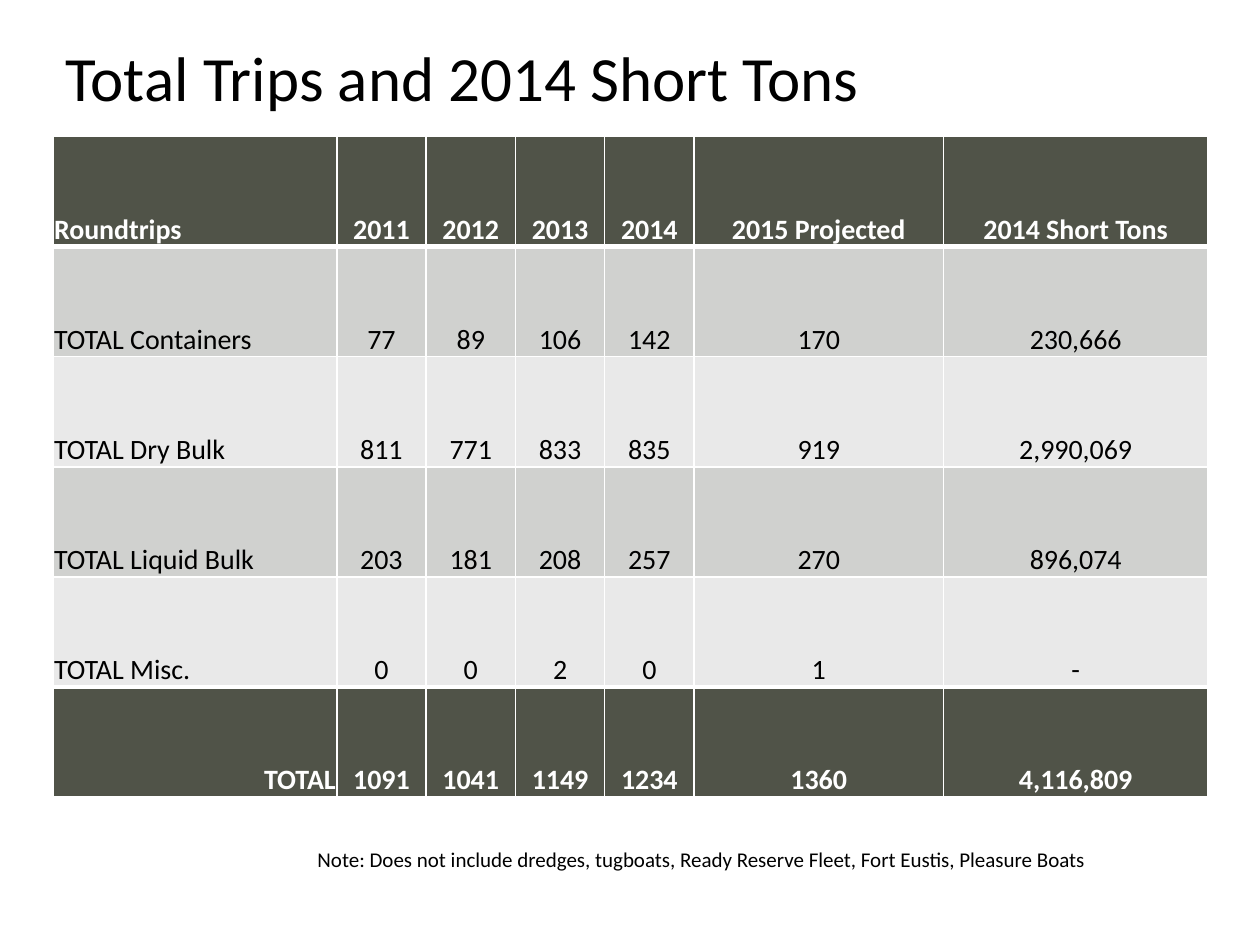
from lxml.etree import SubElement
from pptx import Presentation
from pptx.dml.color import RGBColor
from pptx.enum.text import MSO_ANCHOR, MSO_AUTO_SIZE, PP_ALIGN
from pptx.oxml.ns import qn
from pptx.util import Cm, Pt

FONT = "Calibri"
BLACK = RGBColor(0x00, 0x00, 0x00)
WHITE = RGBColor(0xFF, 0xFF, 0xFF)
DARK_GREEN = RGBColor(0x50, 0x53, 0x48)
BAND_DARK = RGBColor(0xD0, 0xD1, 0xCF)
BAND_LIGHT = RGBColor(0xE9, 0xE9, 0xE9)

LEFT = Cm(1.07)
WIDTH = Cm(23.28)
ROW_HEIGHT = Cm(2.22)
COLUMN_WIDTHS = [Cm(5.72)] + [Cm(1.8)] * 4 + [Cm(5.03), Cm(5.33)]
ROWS = [
    ["Roundtrips", "2011", "2012", "2013", "2014", "2015 Projected", "2014 Short Tons"],
    ["TOTAL Containers", "77", "89", "106", "142", "170", "230,666"],
    ["TOTAL Dry Bulk", "811", "771", "833", "835", "919", "2,990,069"],
    ["TOTAL Liquid Bulk", "203", "181", "208", "257", "270", "896,074"],
    ["TOTAL Misc.", "0", "0", "2", "0", "1", "-"],
    ["TOTAL", "1091", "1041", "1149", "1234", "1360", "4,116,809"],
]
LAST_ROW = len(ROWS) - 1


def format_paragraph(paragraph, size, color=BLACK, bold=False, alignment=PP_ALIGN.LEFT):
    paragraph.alignment = alignment
    paragraph.font.name = FONT
    paragraph.font.size = Pt(size)
    paragraph.font.bold = bold
    paragraph.font.color.rgb = color


def fill_text(shape, text, size):
    frame = shape.text_frame
    frame.word_wrap = True
    frame.auto_size = MSO_AUTO_SIZE.NONE
    frame.vertical_anchor = MSO_ANCHOR.TOP
    frame.text = text
    format_paragraph(frame.paragraphs[0], size)


def add_title(slide, text):
    title = slide.shapes.title
    title.left, title.top, title.width, title.height = LEFT, Cm(0.64), WIDTH, Cm(1.47)
    fill_text(title, text, 36)


def add_note(slide, text):
    note = slide.shapes.add_textbox(Cm(6.15), Cm(16.94), Cm(17.78), Cm(0.84))
    fill_text(note, text, 12)


def add_borders(cell, top, bottom):
    properties = cell._tc.get_or_add_tcPr()
    for side, width in (("L", 1), ("R", 1), ("T", top), ("B", bottom)):
        line = SubElement(properties, qn(f"a:ln{side}"), w=str(Pt(width)))
        fill = SubElement(line, qn("a:solidFill"))
        SubElement(fill, qn("a:srgbClr"), val=str(WHITE))


def format_cell(cell, row, column):
    emphasized = row in (0, LAST_ROW)
    add_borders(
        cell,
        top=3 if row in (1, LAST_ROW) else 1,
        bottom=3 if row in (0, LAST_ROW - 1) else 1,
    )
    cell.fill.solid()
    if emphasized:
        cell.fill.fore_color.rgb = DARK_GREEN
    else:
        cell.fill.fore_color.rgb = BAND_DARK if row % 2 else BAND_LIGHT
    cell.vertical_anchor = MSO_ANCHOR.BOTTOM
    cell.margin_left = cell.margin_top = cell.margin_right = Cm(0.02)
    cell.margin_bottom = 0
    if column:
        alignment = PP_ALIGN.CENTER
    else:
        alignment = PP_ALIGN.RIGHT if row == LAST_ROW else PP_ALIGN.LEFT
    color = WHITE if emphasized else BLACK
    format_paragraph(cell.text_frame.paragraphs[0], 16, color, emphasized, alignment)


def add_trips_table(slide):
    table = slide.shapes.add_table(
        len(ROWS), len(COLUMN_WIDTHS), LEFT, Cm(2.75), WIDTH, ROW_HEIGHT * len(ROWS)
    ).table
    table.last_row = True
    for column, width in zip(table.columns, COLUMN_WIDTHS):
        column.width = width
    for row, values in enumerate(ROWS):
        for column, value in enumerate(values):
            cell = table.cell(row, column)
            cell.text = value
            format_cell(cell, row, column)


def main():
    presentation = Presentation()
    presentation.slide_width = Cm(25.4)
    presentation.slide_height = Cm(19.05)
    slide = presentation.slides.add_slide(presentation.slide_layouts[5])
    add_title(slide, "Total Trips and 2014 Short Tons")
    add_trips_table(slide)
    add_note(
        slide,
        "Note: Does not include dredges, tugboats, Ready Reserve Fleet, "
        "Fort Eustis, Pleasure Boats",
    )
    presentation.save("out.pptx")


if __name__ == "__main__":
    main()
